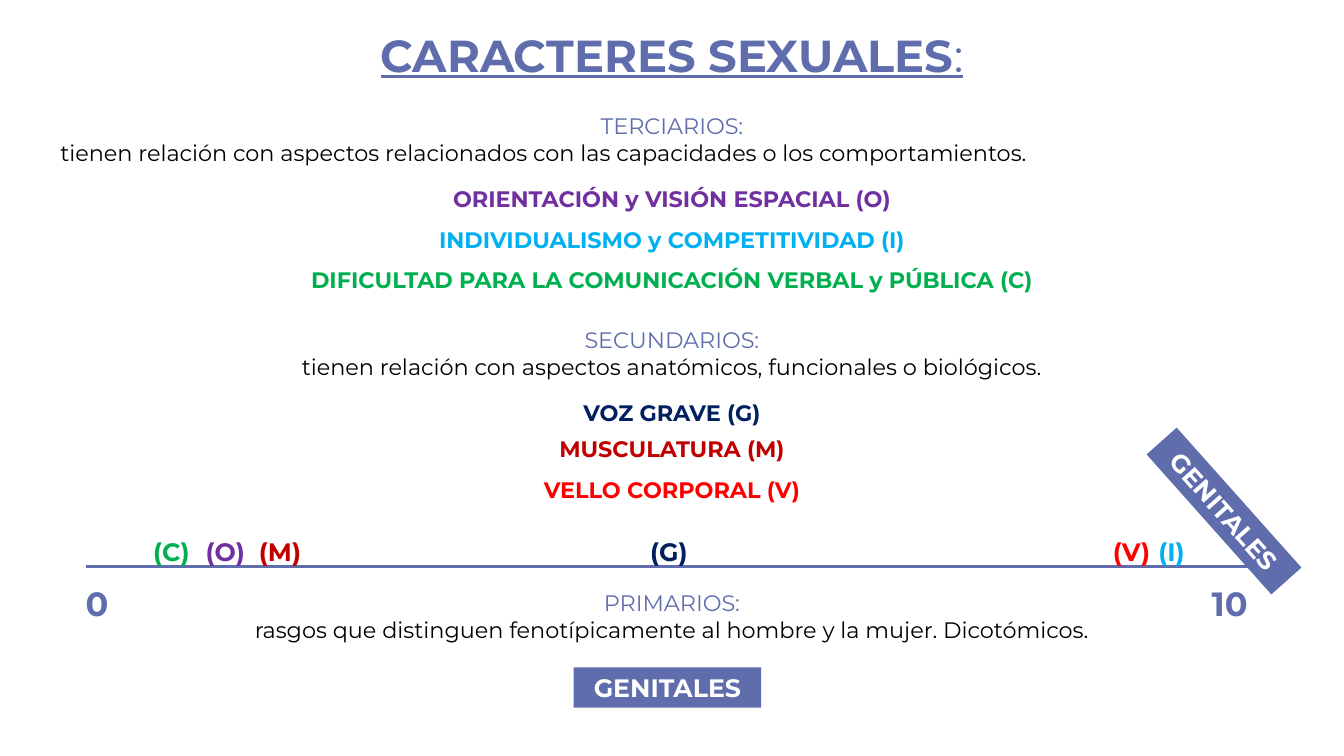
from lxml.etree import SubElement
from pptx import Presentation
from pptx.dml.color import RGBColor
from pptx.enum.shapes import MSO_CONNECTOR as CONN, MSO_SHAPE as SHAPE
from pptx.enum.text import MSO_ANCHOR as ANCHOR, MSO_AUTO_SIZE as FIT, PP_ALIGN as ALIGN
from pptx.oxml.ns import qn
from pptx.util import Inches, Pt

BLUE = RGBColor(0x5F, 0x6D, 0xAC)
BLACK = RGBColor(0, 0, 0)
WHITE = RGBColor(0xFF, 0xFF, 0xFF)
PURPLE = RGBColor(0x70, 0x30, 0xA0)
SKY = RGBColor(0, 0xB0, 0xF0)
GREEN = RGBColor(0, 0xB0, 0x50)
NAVY = RGBColor(0, 0x20, 0x60)
DARK_RED = RGBColor(0xC0, 0, 0)
RED = RGBColor(0xFF, 0, 0)

WIDTH, HEIGHT = 13.33, 7.5

SECTIONS = [
    (1.06, "TERCIARIOS:", ALIGN.LEFT,
     "\ttienen relación con aspectos relacionados con las capacidades o los comportamientos."),
    (3.19, "SECUNDARIOS:", ALIGN.CENTER,
     "tienen relación con aspectos anatómicos, funcionales o biológicos."),
    (5.8, "PRIMARIOS:", ALIGN.CENTER,
     "rasgos que distinguen fenotípicamente al hombre y la mujer. Dicotómicos."),
]
TRAITS = [
    (1.79, "ORIENTACIÓN y VISIÓN ESPACIAL", "O", PURPLE, 1.94),
    (2.19, "INDIVIDUALISMO y COMPETITIVIDAD", "I", SKY, 11.39),
    (2.59, "DIFICULTAD PARA LA COMUNICACIÓN VERBAL y PÚBLICA", "C", GREEN, 1.42),
    (3.91, "VOZ GRAVE", "G", NAVY, 6.35),
    (4.27, "MUSCULATURA", "M", DARK_RED, 2.47),
    (4.67, "VELLO CORPORAL", "V", RED, 10.94),
]


def add_run(p, text, size=16, color=BLACK, bold=False, underline=False):
    r = p.add_run()
    r.text = text
    r.font.name = "Montserrat"
    r.font.size = Pt(size)
    r.font.color.rgb = color
    r.font.bold = bold
    r.font.underline = underline


class Deck:
    def __init__(self):
        self.prs = Presentation()
        self.prs.slide_width = Inches(WIDTH)
        self.prs.slide_height = Inches(HEIGHT)
        self.slide = self.prs.slides.add_slide(self.prs.slide_layouts[5])

    def title(self, text, top, height):
        sp = self.slide.shapes.title
        sp.left, sp.top = Inches(0), Inches(top)
        sp.width, sp.height = Inches(WIDTH), Inches(height)
        tf = sp.text_frame
        tf.auto_size = FIT.NONE
        tf.vertical_anchor = ANCHOR.TOP
        p = tf.paragraphs[0]
        p.alignment = ALIGN.CENTER
        add_run(p, text, size=32, color=BLUE, bold=True, underline=True)
        add_run(p, ":", size=32, color=BLUE, underline=True)

    def text(self, text, left, top, width, height, align=ALIGN.LEFT, **style):
        tf = self.slide.shapes.add_textbox(
            Inches(left), Inches(top), Inches(width), Inches(height)).text_frame
        tf.word_wrap = True
        p = tf.paragraphs[0]
        p.alignment = align
        add_run(p, text, **style)
        return tf

    def section(self, top, heading, align, definition):
        tf = self.text(heading, 0, top, WIDTH, 0.64, ALIGN.CENTER, color=BLUE)
        p = tf.add_paragraph()
        p.alignment = align
        add_run(p, definition)

    def axis(self, left, right, y):
        line = self.slide.shapes.add_connector(
            CONN.STRAIGHT, Inches(left), Inches(y), Inches(right), Inches(y))
        line.line.color.rgb = BLUE
        line.line.width = Pt(1.5)
        SubElement(line._element.spPr, qn("a:effectLst"))

    def label(self, text, left, top, rotation=0):
        sp = self.slide.shapes.add_shape(
            SHAPE.RECTANGLE, Inches(left), Inches(top), Inches(1.86), Inches(0.4))
        sp.rotation = rotation
        sp.shadow.inherit = False
        sp.fill.solid()
        sp.fill.fore_color.rgb = BLUE
        sp.line.fill.background()
        p = sp.text_frame.paragraphs[0]
        p.alignment = ALIGN.CENTER
        add_run(p, text, size=18, color=WHITE, bold=True)


def main():
    deck = Deck()
    deck.title("CARACTERES SEXUALES", 0.22, 0.64)
    for section in SECTIONS:
        deck.section(*section)
    deck.axis(0.85, 12.39, 5.62)
    for top, name, letter, color, mark_left in TRAITS:
        deck.text(f"{name} ({letter})", 0, top, WIDTH, 0.37, ALIGN.CENTER,
                  color=color, bold=True)
        deck.text(f"({letter})", mark_left, 5.27, 0.65, 0.4,
                  size=18, color=color, bold=True)
    for value, left in (("0", 0.75), ("10", 11.92)):
        deck.text(value, left, 5.73, 0.66, 0.5, size=24, color=BLUE, bold=True)
    deck.label("GENITALES", 5.69, 6.62)
    deck.label("GENITALES", 11.21, 4.87, rotation=48.3)
    deck.prs.save("out.pptx")


if __name__ == "__main__":
    main()
